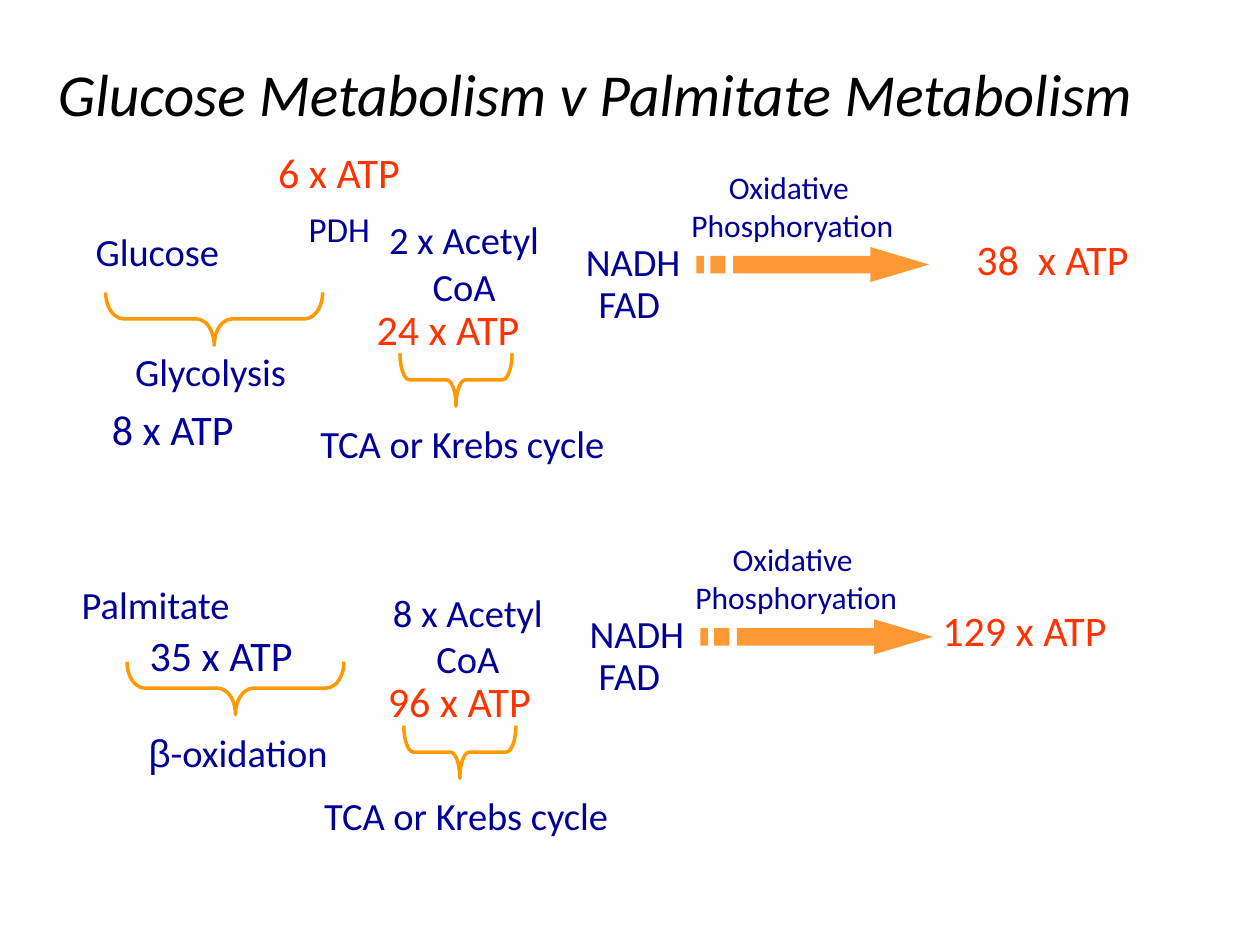
from pptx import Presentation
from pptx.dml.color import RGBColor
from pptx.enum.shapes import MSO_SHAPE
from pptx.enum.text import PP_ALIGN
from pptx.util import Pt

COLORS = {"title": "000000", "step": "000099", "yield": "FF3300",
          "arrow": "FF9933", "brace": "FF9900"}

presentation = Presentation()
presentation.slide_width = Pt(720)
presentation.slide_height = Pt(540)
slide = presentation.slides.add_slide(presentation.slide_layouts[6])


def add_label(text, left, top, width, size=22, color="step", align=PP_ALIGN.CENTER):
    lines = text.split("\n")
    height = 7.2 + 1.22 * size * len(lines)
    box = slide.shapes.add_textbox(Pt(left), Pt(top), Pt(width), Pt(height))
    frame = box.text_frame
    frame.word_wrap = True
    frame.text = text
    for paragraph in frame.paragraphs:
        paragraph.alignment = align
        paragraph.font.name = "Calibri"
        paragraph.font.size = Pt(size)
        paragraph.font.color.rgb = RGBColor.from_string(COLORS[color])
    return frame.paragraphs[0]


def add_brace(left, top, height, curve):
    brace = slide.shapes.add_shape(MSO_SHAPE.LEFT_BRACE, Pt(left), Pt(top), Pt(30.2), Pt(height))
    brace.rotation = 270
    brace.adjustments[0] = curve
    brace.shadow.inherit = False
    brace.fill.background()
    brace.line.color.rgb = RGBColor.from_string(COLORS["brace"])
    brace.line.width = Pt(2)


arrow_outlines = [
    [(99.4, 0), (99.4, 5), (20.9, 5), (20.9, 15), (99.4, 15), (99.4, 20), (133, 10)],
    [(7.9, 5), (7.9, 15), (16.6, 15), (16.6, 5)],
    [(0, 5), (0, 15), (4.3, 15), (4.3, 5)],
]

for acetyl, x, y in [("2 x Acetyl\nCoA", 0, 0), ("8 x Acetyl\nCoA", 2.2, 212.7)]:
    add_label(acetyl, 210.2 + x, 120.2 + y, 110)
    add_label("NADH", 323.3 + x, 132.4 + y, 77)
    add_label("FAD", 330.5, 156.2 + y, 58.3)
    add_label("Oxidative \nPhosphoryation", 383 + x, 92.4 + y, 139.7, 18)
    add_label("TCA or Krebs cycle", 162 + x, 236.4 + y, 204.5)
    add_brace(245.5 + x, 185 + y, 64, 0.18)

    builder = None
    for outline in arrow_outlines:
        points = [(Pt(398 + x + dx), Pt(141.2 + y + dy)) for dx, dy in outline]
        if builder is None:
            builder = slide.shapes.build_freeform(*points[0])
        else:
            builder.move_to(*points[0])
        builder.add_line_segments(points[1:], close=True)
    arrow = builder.convert_to_shape()
    arrow.shadow.inherit = False
    arrow.fill.solid()
    arrow.fill.fore_color.rgb = RGBColor.from_string(COLORS["arrow"])
    arrow.line.fill.background()

for left, top in [(107.3, 120.2), (119.5, 331.2)]:
    add_brace(left, top, 124, 0.34)

add_label("Glycolysis", 63.4, 195.1, 113.8)
beta = add_label("β", 74.9, 413.3, 122.4)
beta.runs[0].font.name = "Arial"
beta.add_run().text = "-oxidation"

left_labels = [
    ("Glucose Metabolism v Palmitate Metabolism", 26, 28.8, 683, 34, "title"),
    ("Glucose", 47.5, 126.7, 95, 22, "step"),
    ("Palmitate", 39.6, 328.3, 106.6, 22, "step"),
    ("PDH", 169.2, 115.2, 57, 20, "step"),
    ("6 x ATP", 151.9, 79.9, 143.3, 24, "yield"),
    ("8 x ATP", 56.9, 226.8, 100, 24, "step"),
    ("24 x ATP", 208.1, 169.9, 113, 24, "yield"),
    ("38  x ATP", 550.8, 129.6, 119.5, 24, "yield"),
    ("35 x ATP", 78.5, 356.4, 113, 24, "step"),
    ("96 x ATP", 214.6, 382.3, 113, 24, "yield"),
    ("129 x ATP", 531.4, 342, 126.7, 24, "yield"),
]
for text, left, top, width, size, color in left_labels:
    paragraph = add_label(text, left, top, width, size, color, PP_ALIGN.LEFT)
    paragraph.font.italic = True if color == "title" else None

presentation.save("out.pptx")
